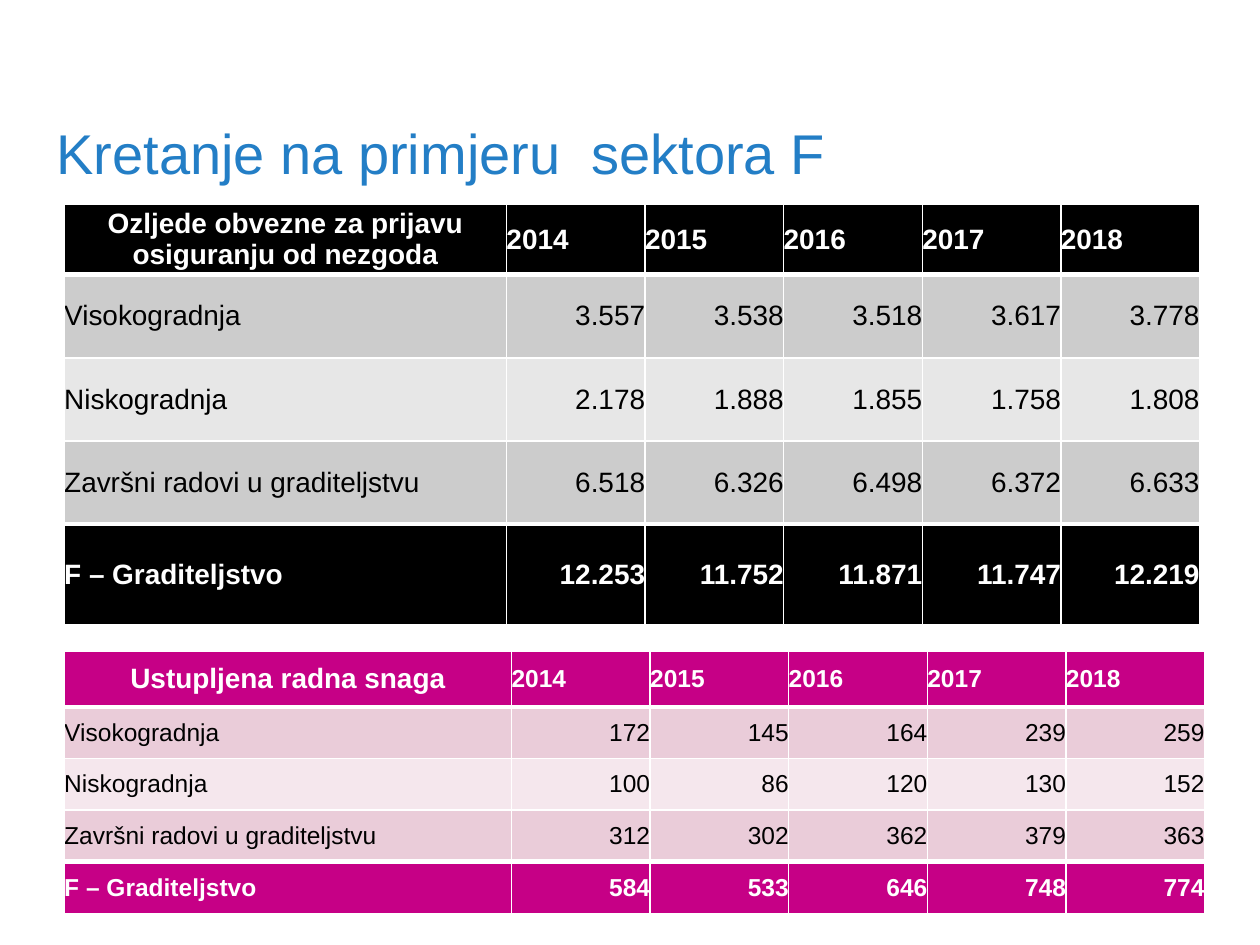
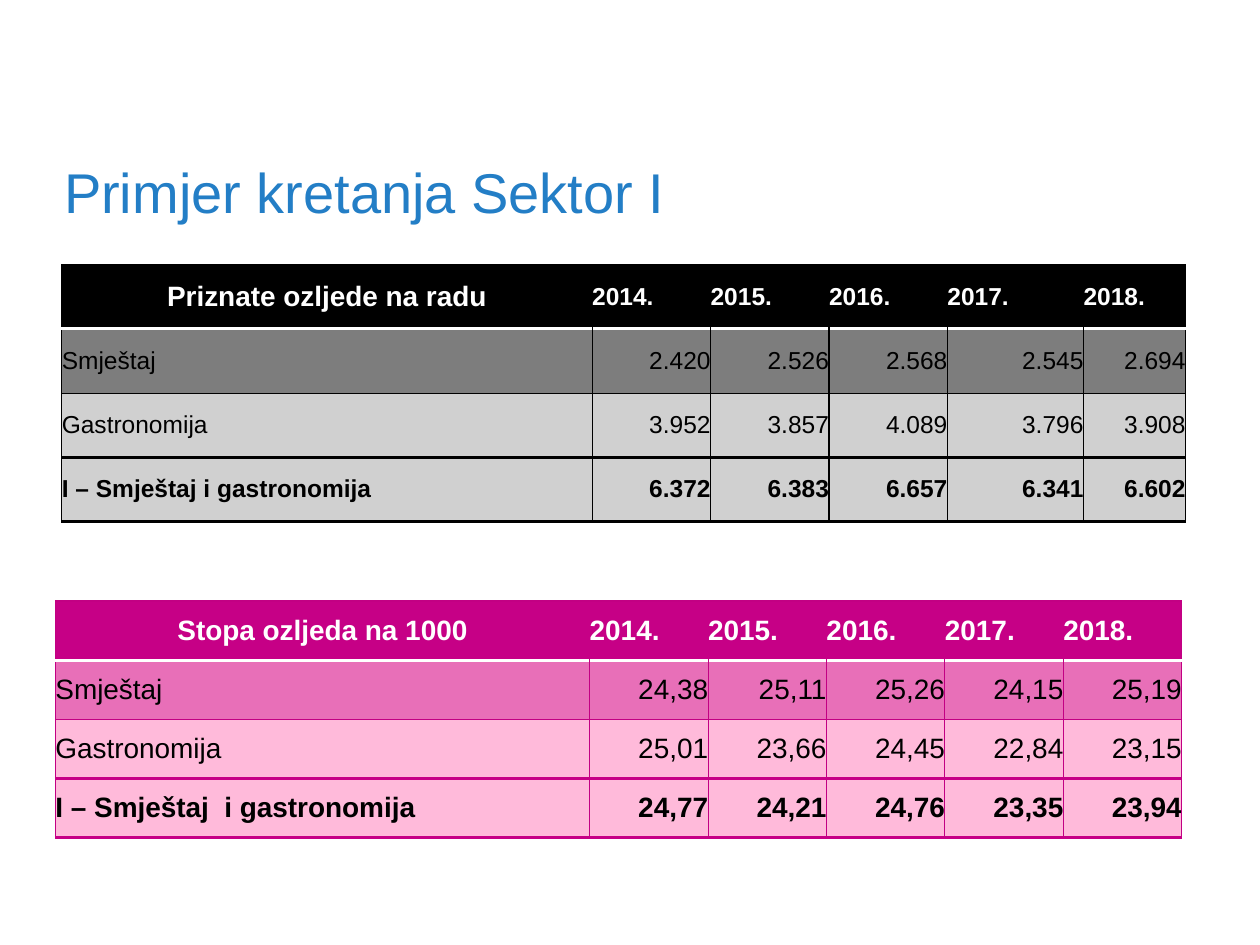
from dataclasses import dataclass

from lxml import etree
from pptx import Presentation
from pptx.dml.color import RGBColor
from pptx.enum.text import MSO_ANCHOR, PP_ALIGN
from pptx.oxml.ns import qn
from pptx.util import Inches, Pt

LEFT, CENTER, RIGHT = PP_ALIGN.LEFT, PP_ALIGN.CENTER, PP_ALIGN.RIGHT
MIDDLE = MSO_ANCHOR.MIDDLE


@dataclass(frozen=True)
class Theme:
    font: str = "Arial"
    title: str = "237EC6"
    white: str = "FFFFFF"
    black: str = "000000"
    magenta: str = "C60086"
    magenta_line: str = "C20083"
    grey_dark: str = "7D7D7D"
    grey_mid: str = "CCCCCC"
    grey_soft: str = "D0D0D0"
    grey_pale: str = "E7E7E7"
    pink_dark: str = "E86FB8"
    pink_mid: str = "EACCD9"
    pink_soft: str = "FFBADA"
    pink_pale: str = "F5E7ED"
    title_size: int = 32
    large: int = 16
    small: int = 14


T = Theme()


@dataclass(frozen=True)
class Rule:
    color: str
    width: float


@dataclass(frozen=True)
class TableStyle:
    head_fill: str
    bands: tuple[str, str]
    total_fill: str
    total_color: str
    grid: Rule
    head_rule: Rule
    total_rule: Rule
    bottom_rule: Rule
    head_dividers: bool


@dataclass(frozen=True)
class DataTable:
    style: TableStyle
    left: float
    top: float
    cols: list[float]
    heights: list[float]
    size: int
    heading: str
    years: str
    rows: dict[str, str]


@dataclass(frozen=True)
class SectorSlide:
    title: str
    left: float
    top: float
    width: float
    tables: list[DataTable]


def blocked(fill: str, bands: tuple[str, str]) -> TableStyle:
    thin, thick = Rule(T.white, 1), Rule(T.white, 3)
    return TableStyle(fill, bands, fill, T.white, thin, thick, thick, thin, True)


def ruled(fill: str, bands: tuple[str, str], line: str) -> TableStyle:
    thick = Rule(fill, 2)
    return TableStyle(fill, bands, bands[1], T.black, Rule(line, 0.75),
                      Rule(T.white, 2), thick, thick, False)


BLACK_BLOCKS = blocked(T.black, (T.grey_mid, T.grey_pale))
MAGENTA_BLOCKS = blocked(T.magenta, (T.pink_mid, T.pink_pale))
BLACK_RULES = ruled(T.black, (T.grey_dark, T.grey_soft), T.black)
MAGENTA_RULES = ruled(T.magenta, (T.pink_dark, T.pink_soft), T.magenta_line)

SLIDES = [
    SectorSlide("Kretanje na primjeru  sektora F", 0.35, 0.92, 7.97, [
        DataTable(
            BLACK_BLOCKS, 0.51, 1.62, [3.51] + [1.1] * 5,
            [0.56] + [0.66] * 3 + [0.8], T.large,
            "Ozljede obvezne za prijavu osiguranju od nezgoda",
            "2014 2015 2016 2017 2018",
            {
                "Visokogradnja": "3.557 3.538 3.518 3.617 3.778",
                "Niskogradnja": "2.178 1.888 1.855 1.758 1.808",
                "Završni radovi u graditeljstvu": "6.518 6.326 6.498 6.372 6.633",
                "F – Graditeljstvo": "12.253 11.752 11.871 11.747 12.219",
            }),
        DataTable(
            MAGENTA_BLOCKS, 0.51, 5.17, [3.55] + [1.1] * 5,
            [0.44] + [0.41] * 4, T.small,
            "Ustupljena radna snaga",
            "2014 2015 2016 2017 2018",
            {
                "Visokogradnja": "172 145 164 239 259",
                "Niskogradnja": "100 86 120 130 152",
                "Završni radovi u graditeljstvu": "312 302 362 379 363",
                "F – Graditeljstvo": "584 533 646 748 774",
            }),
    ]),
    SectorSlide("Primjer kretanja Sektor I", 0.41, 1.23, 8.99, [
        DataTable(
            BLACK_RULES, 0.49, 2.1, [4.21] + [0.94] * 3 + [1.08, 0.81],
            [0.51] * 4, T.small,
            "Priznate ozljede na radu",
            "2014. 2015. 2016. 2017. 2018.",
            {
                "Smještaj": "2.420 2.526 2.568 2.545 2.694",
                "Gastronomija": "3.952 3.857 4.089 3.796 3.908",
                "I – Smještaj i gastronomija": "6.372 6.383 6.657 6.341 6.602",
            }),
        DataTable(
            MAGENTA_RULES, 0.44, 4.77, [4.24] + [0.94] * 5,
            [0.47] * 4, T.large,
            "Stopa ozljeda na 1000",
            "2014. 2015. 2016. 2017. 2018.",
            {
                "Smještaj": "24,38 25,11 25,26 24,15 25,19",
                "Gastronomija": "25,01 23,66 24,45 22,84 23,15",
                "I – Smještaj  i gastronomija": "24,77 24,21 24,76 23,35 23,94",
            }),
    ]),
]


def write(tf, text: str, *, size: int, color: str, bold: bool = False,
          align: PP_ALIGN = LEFT) -> None:
    p = tf.paragraphs[0]
    p.alignment = align
    r = p.add_run()
    r.text = text
    r.font.name = T.font
    r.font.size = Pt(size)
    r.font.bold = bold
    r.font.color.rgb = RGBColor.from_string(color)


def add_border(cell, side: str, rule: Rule | None) -> None:
    tc_pr = cell._tc.get_or_add_tcPr()
    ln = etree.SubElement(tc_pr, qn(f"a:ln{side}"))
    if rule is None:
        ln.set("w", "0")
        etree.SubElement(ln, qn("a:noFill"))
        return
    ln.set("w", str(int(Pt(rule.width))))
    fill = etree.SubElement(ln, qn("a:solidFill"))
    etree.SubElement(fill, qn("a:srgbClr"), val=rule.color)


def row_rules(style: TableStyle, count: int) -> list[Rule]:
    inner = [style.grid] * (count - 3)
    return [style.grid, style.head_rule, *inner, style.total_rule, style.bottom_rule]


def column_rules(style: TableStyle, row: int, count: int) -> list[Rule | None]:
    divider = style.grid if row or style.head_dividers else None
    return [style.grid, *[divider] * (count - 1), style.grid]


def add_data_table(s, data: DataTable) -> None:
    style = data.style
    lines = [[data.heading, *data.years.split()]]
    lines += [[label, *values.split()] for label, values in data.rows.items()]
    n_rows, n_cols = len(lines), len(data.cols)
    table = s.shapes.add_table(
        n_rows, n_cols, Inches(data.left), Inches(data.top),
        Inches(sum(data.cols)), Inches(sum(data.heights))).table
    table.first_row = table.horz_banding = False
    for column, width in zip(table.columns, data.cols):
        column.width = Inches(width)
    for row, height in zip(table.rows, data.heights):
        row.height = Inches(height)

    across = row_rules(style, n_rows)
    for i, line in enumerate(lines):
        head, total = i == 0, i == n_rows - 1
        down = column_rules(style, i, n_cols)
        if head:
            fill, color = style.head_fill, T.white
        elif total:
            fill, color = style.total_fill, style.total_color
        else:
            fill, color = style.bands[(i - 1) % 2], T.black
        for j, text in enumerate(line):
            cell = table.cell(i, j)
            cell.margin_left = cell.margin_right = 0
            cell.margin_top = cell.margin_bottom = 0
            cell.vertical_anchor = MIDDLE
            sides = {"L": down[j], "R": down[j + 1], "T": across[i], "B": across[i + 1]}
            for side, rule in sides.items():
                add_border(cell, side, rule)
            cell.fill.solid()
            cell.fill.fore_color.rgb = RGBColor.from_string(fill)
            if head:
                align = LEFT if j else CENTER
            else:
                align = RIGHT if j else LEFT
            write(cell.text_frame, text, color=color, bold=head or total, align=align,
                  size=T.large if head and j == 0 else data.size)


def add_sector_slide(prs, sector: SectorSlide) -> None:
    s = prs.slides.add_slide(prs.slide_layouts[6])
    sp = s.shapes.add_textbox(Inches(sector.left), Inches(sector.top),
                              Inches(sector.width), Inches(0.58))
    tf = sp.text_frame
    tf.word_wrap = True
    tf.vertical_anchor = MIDDLE
    write(tf, sector.title, size=T.title_size, color=T.title)
    for data in sector.tables:
        add_data_table(s, data)


def main() -> None:
    prs = Presentation()
    prs.slide_width, prs.slide_height = Inches(10), Inches(7.5)
    for sector in SLIDES:
        add_sector_slide(prs, sector)
    prs.save("out.pptx")


if __name__ == "__main__":
    main()
